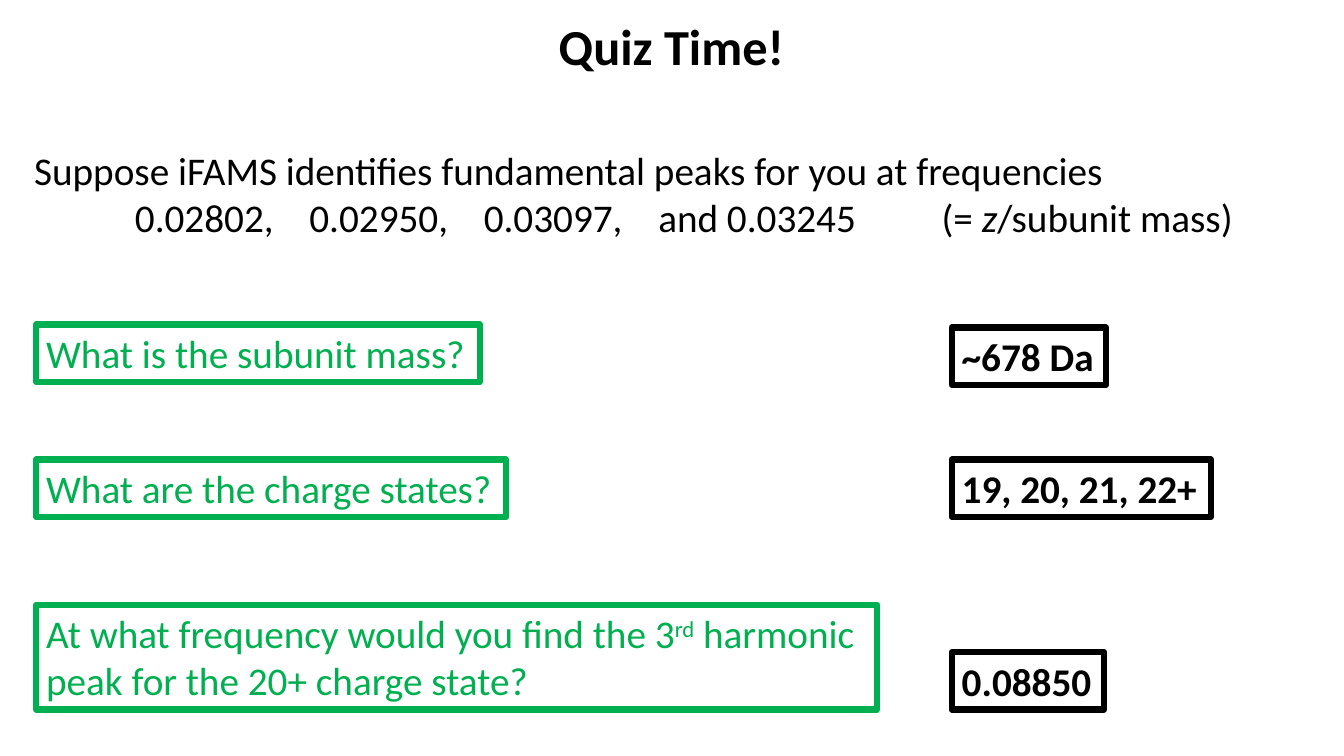
"""Build the quiz slide on subunit mass and charge states."""
import pptx
import pptx.dml.color
import pptx.enum.text
import pptx.oxml
import pptx.oxml.ns
import pptx.util
from pptx.util import Inches

BLACK = pptx.dml.color.RGBColor(0x00, 0x00, 0x00)
GREEN = pptx.dml.color.RGBColor(0x00, 0xB0, 0x50)

BODY = {"name": "Calibri", "size": pptx.util.Pt(28), "bold": False}
ANSWER = {**BODY, "bold": True}
HEADING = {**ANSWER, "size": pptx.util.Pt(36)}
ITALIC = {"italic": True}
SUPERSCRIPT = "30000"

QUESTION_LEFT, ANSWER_LEFT = 0.36, 9.44
LINE_BOX_HEIGHT = 0.57
FREQUENCY_TABS = [1 + 1.73 * step for step in range(4)] + [9]

QUESTIONS = [
    (3.22, 4.4, LINE_BOX_HEIGHT, [["What is the subunit mass?"]]),
    (4.56, 4.66, LINE_BOX_HEIGHT, [["What are the charge states?"]]),
    (6, 8.34, 1.04, [
        ["At what frequency would you find the 3", ("rd", {}, SUPERSCRIPT), " harmonic"],
        ["peak for the 20+ charge state?"],
    ]),
]
ANSWERS = [
    (3.25, 1.53, "~678 Da"),
    (4.56, 2.57, "19, 20, 21, 22+"),
    (6.47, 1.51, "0.08850"),
]
INTRO = [
    ["Suppose iFAMS identifies fundamental peaks for you at frequencies"],
    ["\t0.02802,\t0.02950,\t0.03097,\tand 0.03245\t(= ", ("z", ITALIC, None), "/subunit mass)"],
]


def format_font(font, values, color):
    """Apply a dict of format values and a colour to a font."""
    for name, value in values.items():
        setattr(font, name, value)
    font.color.rgb = color


def set_tabs(paragraph, positions):
    """Give a paragraph left tab stops at positions in inches."""
    properties = paragraph._p.get_or_add_pPr()
    tabs = pptx.oxml.parse_xml(f'<a:tabLst {pptx.oxml.ns.nsdecls("a")}/>')
    properties.append(tabs)
    for position in positions:
        stop = tabs.makeelement(pptx.oxml.ns.qn("a:tab"), {"pos": str(Inches(position)), "algn": "l"})
        tabs.append(stop)


def write_lines(frame, lines, values, color, tabs=()):
    """Write each line as a paragraph of plain or specially formatted runs."""
    frame.word_wrap = True
    for index, line in enumerate(lines):
        paragraph = frame.add_paragraph() if index else frame.paragraphs[0]
        if tabs:
            set_tabs(paragraph, tabs)
        for piece in line:
            words, extra, baseline = (piece, {}, None) if isinstance(piece, str) else piece
            run = paragraph.add_run()
            run.text = words
            format_font(run.font, {**values, **extra}, color)
            if baseline:
                run._r.get_or_add_rPr().set("baseline", baseline)


def add_text(slide, bounds, lines, values, color, tabs=()):
    """Add a text box with the given lines and return it."""
    box = slide.shapes.add_textbox(*map(Inches, bounds))
    write_lines(box.text_frame, lines, values, color, tabs)
    return box


def add_framed_text(slide, bounds, lines, values, color):
    """Add a text box with a thick outline in its text colour."""
    box = add_text(slide, bounds, lines, values, color)
    box.line.color.rgb = color
    box.line.width = pptx.util.Pt(4.5)


def add_title(slide, bounds, heading):
    """Move, fill and format the title placeholder."""
    title = slide.shapes.title
    title.left, title.top, title.width, title.height = map(Inches, bounds)
    write_lines(title.text_frame, [[heading]], HEADING, BLACK)
    title.text_frame.auto_size = pptx.enum.text.MSO_AUTO_SIZE.NONE
    title.text_frame.paragraphs[0].alignment = pptx.enum.text.PP_ALIGN.CENTER


def main():
    """Build and save the slide."""
    deck = pptx.Presentation()
    deck.slide_width, deck.slide_height = Inches(13.33), Inches(7.5)
    slide = deck.slides.add_slide(deck.slide_layouts[5])
    add_title(slide, (5.43, 0.09, 2.46, 0.71), "Quiz Time!")
    add_text(slide, (0.24, 1.4, 12.22, 1.04), INTRO, BODY, BLACK, FREQUENCY_TABS)
    for top, width, height, question in QUESTIONS:
        add_framed_text(slide, (QUESTION_LEFT, top, width, height), question, BODY, GREEN)
    for top, width, answer in ANSWERS:
        add_framed_text(slide, (ANSWER_LEFT, top, width, LINE_BOX_HEIGHT), [[answer]], ANSWER, BLACK)
    deck.save("out.pptx")


if __name__ == "__main__":
    main()
